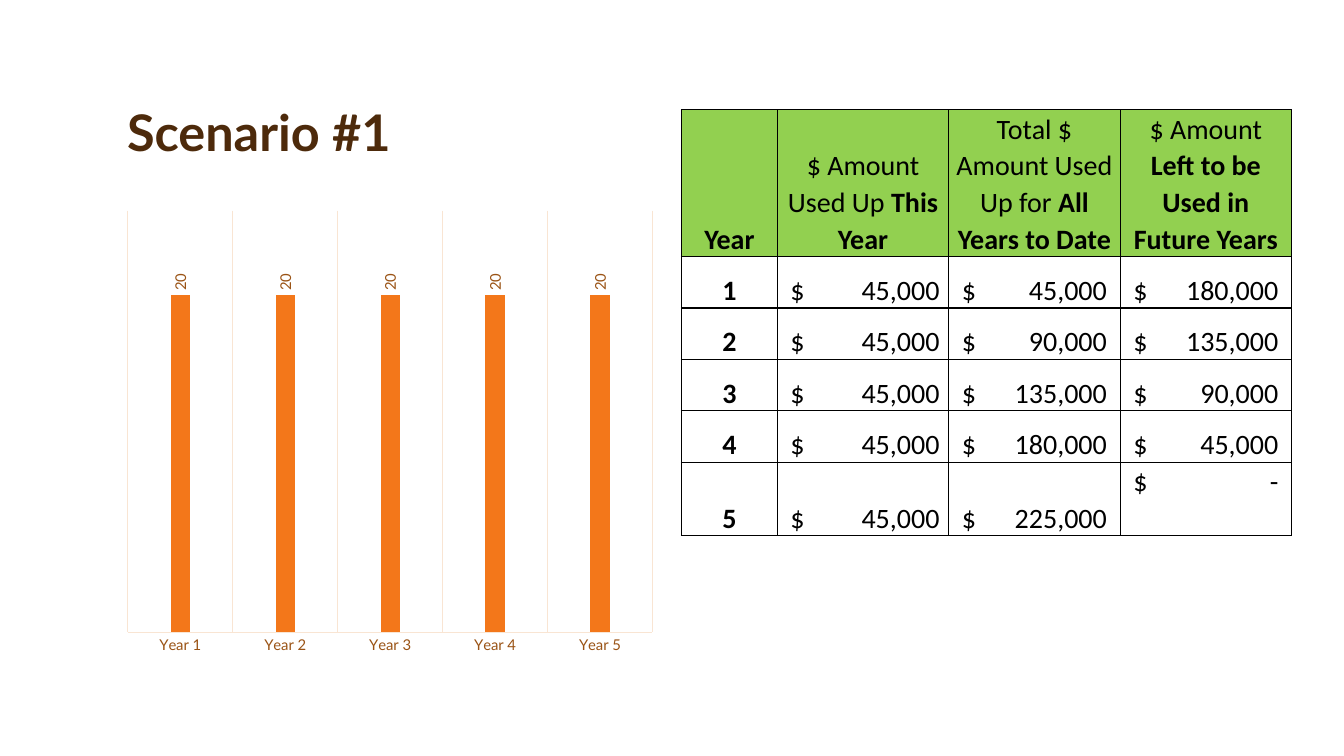
from lxml import etree
from pptx import Presentation
from pptx.chart.data import CategoryChartData
from pptx.dml.color import RGBColor
from pptx.enum.chart import XL_CHART_TYPE, XL_LABEL_POSITION, XL_TICK_MARK
from pptx.enum.text import MSO_ANCHOR, PP_ALIGN
from pptx.oxml.ns import qn
from pptx.util import Inches, Pt

COLUMNS = XL_CHART_TYPE.COLUMN_CLUSTERED
OUTSIDE_END = XL_LABEL_POSITION.OUTSIDE_END
NO_TICK = XL_TICK_MARK.NONE
TOP, BOTTOM = MSO_ANCHOR.TOP, MSO_ANCHOR.BOTTOM
LEFT, CENTER = PP_ALIGN.LEFT, PP_ALIGN.CENTER

# Content
TITLE = "Scenario #1"
YEARLY_VALUES = {f"Year {year}": 20 for year in range(1, 6)}
HEADINGS = [  # plain part, bold part
    ("", "Year"),
    ("$ Amount Used Up ", "This Year"),
    ("Total $ Amount Used Up for ", "All Years to Date"),
    ("$ Amount ", "Left to be Used in Future Years"),
]
AMOUNTS = [
    ("1", "45,000", "45,000", "180,000"),
    ("2", "45,000", "90,000", "135,000"),
    ("3", "45,000", "135,000", "90,000"),
    ("4", "45,000", "180,000", "45,000"),
    ("5", "45,000", "225,000", "-"),
]

# Style
COLORS = {"title": "4D2A0B", "label": "9A5315", "grid": "F9E5D3", "bar": "F3771A",
          "header": "92D050", "body": "FFFFFF", "ink": "000000"}
TITLE_FONT, TABLE_FONT = "Lato", "Calibri"
COLUMN_WIDTHS = [0.95, 1.7, 1.7, 1.7]
ROW_HEIGHTS = [1.45, 0.51, 0.51, 0.51, 0.51, 0.73]
AMOUNT_STOPS = [None, 1.48, 1.44, 1.44]


def color(name):
    return RGBColor.from_string(COLORS[name])


def style(font, face, size, color_name, bold=False):
    font.name, font.size, font.bold = face, Pt(size), bold
    font.color.rgb = color(color_name)


def add_borders(cell):
    properties = cell._tc.get_or_add_tcPr()
    for side in ("a:lnL", "a:lnR", "a:lnT", "a:lnB"):
        line = etree.SubElement(properties, qn(side), w=str(Pt(1)))
        fill = etree.SubElement(line, qn("a:solidFill"))
        etree.SubElement(fill, qn("a:srgbClr"), val=COLORS["ink"])


def fill_cell(cell, parts, fill_name, align=CENTER, anchor=BOTTOM, inset=0.07, stop=None):
    """Write (text, bold) parts; stop is a right-aligned tab in inches."""
    add_borders(cell)
    cell.fill.solid()
    cell.fill.fore_color.rgb = color(fill_name)
    cell.margin_left, cell.margin_right = Inches(inset), Inches(0.07)
    cell.margin_top = cell.margin_bottom = 0
    cell.vertical_anchor = anchor
    paragraph = cell.text_frame.paragraphs[0]
    paragraph.alignment, paragraph.line_spacing = align, 1.07
    if stop:
        tabs = etree.SubElement(paragraph._p.get_or_add_pPr(), qn("a:tabLst"))
        etree.SubElement(tabs, qn("a:tab"), pos=str(Inches(stop)), algn="r")
    for text, bold in parts:
        if text:
            run = paragraph.add_run()
            run.text = text
            style(run.font, TABLE_FONT, 20, "ink", bold)


prs = Presentation()
prs.slide_width, prs.slide_height = Inches(13.33), Inches(7.5)
slide = prs.slides.add_slide(prs.slide_layouts[5])

# Title
title = slide.shapes.title
title.left, title.top = Inches(1.16), Inches(0.33)
title.width, title.height = Inches(11), Inches(1.33)
title.text_frame.text = TITLE
title.text_frame.vertical_anchor = BOTTOM
heading = title.text_frame.paragraphs[0]
heading.alignment, heading.line_spacing = LEFT, 0.9
style(heading.runs[0].font, TITLE_FONT, 36, "title", True)

# Column chart
chart_data = CategoryChartData()
chart_data.categories = list(YEARLY_VALUES)
chart_data.add_series("Series 1", list(YEARLY_VALUES.values()))
chart = slide.shapes.add_chart(COLUMNS, Inches(1.16), Inches(2), Inches(5.42),
                               Inches(4.58), chart_data).chart
chart.has_legend = chart.has_title = False
style(chart.font, TITLE_FONT, 10, "label")

year_axis = chart.category_axis
year_axis.major_tick_mark = year_axis.minor_tick_mark = NO_TICK
year_axis.has_major_gridlines = True
style(year_axis.tick_labels.font, TITLE_FONT, 10.6, "label")
for line in (year_axis.format.line, year_axis.major_gridlines.format.line):
    line.color.rgb = color("grid")
    line.width = Pt(0.75)

value_axis = chart.value_axis
value_axis.minimum_scale, value_axis.maximum_scale = 0, 25
value_axis.has_major_gridlines = False
value_axis.visible = False

plot = chart.plots[0]
plot.gap_width, plot.overlap, plot.vary_by_categories = 444, -90, False
bars = plot.series[0]
bars.format.fill.solid()
bars.format.fill.fore_color.rgb = color("bar")
labels = bars.data_labels
labels.show_value, labels.position = True, OUTSIDE_END
style(labels.font, TITLE_FONT, 10.6, "label")
label_body = labels._element.find(qn("c:txPr")).find(qn("a:bodyPr"))
label_body.set("rot", "-5400000")
label_body.set("vert", "horz")

# Amounts table
table = slide.shapes.add_table(len(ROW_HEIGHTS), len(COLUMN_WIDTHS), Inches(6.76), Inches(1.09),
                               Inches(sum(COLUMN_WIDTHS)), Inches(sum(ROW_HEIGHTS))).table
table.horz_banding = False
for column, width in zip(table.columns, COLUMN_WIDTHS):
    column.width = Inches(width)
for row, height in zip(table.rows, ROW_HEIGHTS):
    row.height = Inches(height)

for col, (plain, bold) in enumerate(HEADINGS):
    fill_cell(table.cell(0, col), [(plain, False), (bold, True)], "header")
for row, (year, *amounts) in enumerate(AMOUNTS, start=1):
    fill_cell(table.cell(row, 0), [(year, True)], "body")
    for col, amount in enumerate(amounts, start=1):
        fill_cell(table.cell(row, col), [(f"$\t{amount}", False)], "body", LEFT,
                  TOP if amount == "-" else BOTTOM, 0.13, AMOUNT_STOPS[col])

prs.save("out.pptx")
